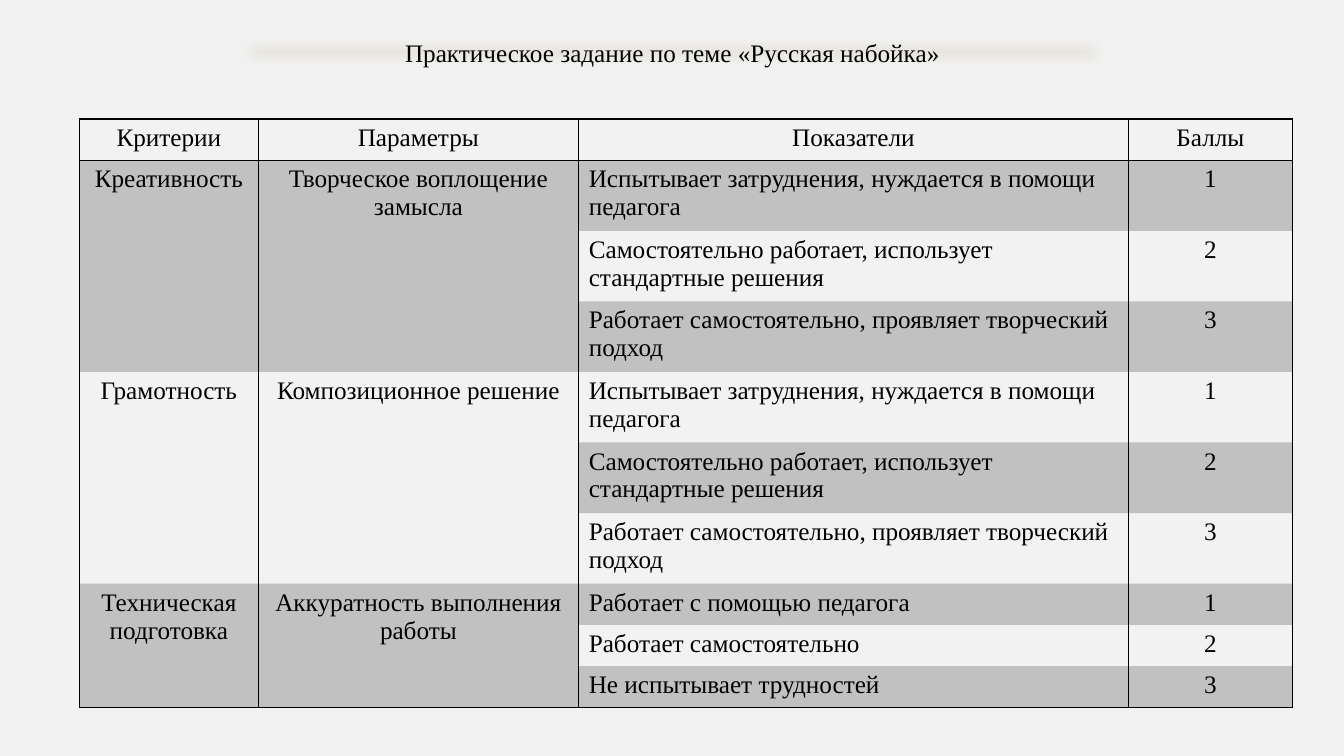
from dataclasses import dataclass

import pptx
import pptx.dml.color
import pptx.enum.shapes
import pptx.enum.text
import pptx.oxml
import pptx.oxml.ns
import pptx.util
from pptx.util import Inches


@dataclass(frozen=True)
class Theme:
    font: str = "Times New Roman"
    text_size: int = 18
    border_width: float = 1
    title_line_width: float = 0.5
    ink: str = "000000"
    background: str = "F2F2F2"
    title_fill: str = "E8E5DE"
    title_line: str = "9CA383"
    band_opacity: int = 20
    soft_edge: float = 0.12
    plain_table_style: str = "{2D5ABB26-0587-4C30-8999-92F81FD0307C}"


THEME = Theme()
ALIGN = pptx.enum.text.PP_ALIGN
TITLE = "Практическое задание по теме «Русская набойка»"
HEADERS = ["Критерии", "Параметры", "Показатели", "Баллы"]
INDEPENDENCE_LEVELS = [
    "Испытывает затруднения, нуждается в помощи педагога",
    "Самостоятельно работает, использует стандартные решения",
    "Работает самостоятельно, проявляет творческий подход",
]
ACCURACY_LEVELS = [
    "Работает с помощью педагога",
    "Работает самостоятельно",
    "Не испытывает трудностей",
]
CRITERIA = [
    ("Креативность", "Творческое воплощение замысла", INDEPENDENCE_LEVELS),
    ("Грамотность", "Композиционное решение", INDEPENDENCE_LEVELS),
    ("Техническая подготовка", "Аккуратность выполнения работы", ACCURACY_LEVELS),
]
LEVEL_COUNT = 3
COLUMN_WIDTHS = [1.77, 3.18, 5.45, 1.63]
INDICATOR_COLUMN = 2
SINGLE_ROW = 0.41
DOUBLE_ROW = 0.7


def color(value):
    return pptx.dml.color.RGBColor.from_string(value)


def write_text(text_frame, text, alignment):
    text_frame.text = text
    paragraph = text_frame.paragraphs[0]
    paragraph.alignment = alignment
    for run in paragraph.runs:
        run.font.name = THEME.font
        run.font.size = pptx.util.Pt(THEME.text_size)
        run.font.color.rgb = color(THEME.ink)


def add_title(slide):
    shape = slide.shapes.add_shape(
        pptx.enum.shapes.MSO_SHAPE.RECTANGLE,
        Inches(2.34), Inches(0.32), Inches(8.66), Inches(0.4),
    )
    shape.fill.solid()
    shape.fill.fore_color.rgb = color(THEME.title_fill)
    shape.line.color.rgb = color(THEME.title_line)
    shape.line.width = pptx.util.Pt(THEME.title_line_width)
    shape.shadow.inherit = False
    effects = shape._element.spPr.find(pptx.oxml.ns.qn("a:effectLst"))
    soft_edge = pptx.oxml.parse_xml(
        f'<a:softEdge {pptx.oxml.ns.nsdecls("a")} rad="{Inches(THEME.soft_edge)}"/>'
    )
    effects.append(soft_edge)
    shape.text_frame.word_wrap = True
    write_text(shape.text_frame, TITLE, ALIGN.CENTER)


def set_borders(cell, sides):
    properties = cell._tc.get_or_add_tcPr()
    for side in "LRTB":
        if side in sides:
            width = pptx.util.Pt(THEME.border_width)
            fill = f'<a:solidFill><a:srgbClr val="{THEME.ink}"/></a:solidFill>'
        else:
            width, fill = 0, "<a:noFill/>"
        properties.append(pptx.oxml.parse_xml(
            f'<a:ln{side} {pptx.oxml.ns.nsdecls("a")} w="{width}">{fill}</a:ln{side}>'
        ))


def set_band(cell, shaded):
    if not shaded:
        cell.fill.background()
        return
    cell.fill.solid()
    cell.fill.fore_color.rgb = color(THEME.ink)
    rgb = cell._tc.tcPr.find(".//" + pptx.oxml.ns.qn("a:solidFill") + "[last()]/" + pptx.oxml.ns.qn("a:srgbClr"))
    for rgb in cell._tc.tcPr.findall(pptx.oxml.ns.qn("a:solidFill") + "/" + pptx.oxml.ns.qn("a:srgbClr")):
        rgb.append(pptx.oxml.parse_xml(
            f'<a:alpha {pptx.oxml.ns.nsdecls("a")} val="{THEME.band_opacity * 1000}"/>'
        ))


def style_cells(table):
    last_row = len(table.rows) - 1
    for row in range(len(table.rows)):
        for column in range(len(COLUMN_WIDTHS)):
            cell = table.cell(row, column)
            merged = row > 0 and column < INDICATOR_COLUMN
            first_row = row - (row - 1) % LEVEL_COUNT if merged else row
            end_row = first_row + LEVEL_COUNT - 1 if merged else row
            sides = "LR"
            if row <= 1:
                sides += "T"
            if row == 0 or end_row == last_row:
                sides += "B"
            set_borders(cell, sides)
            set_band(cell, first_row % 2 == 1)


def fill_criterion(table, first_row, criterion, parameter, levels):
    for column, text in enumerate((criterion, parameter)):
        cell = table.cell(first_row, column)
        cell.merge(table.cell(first_row + LEVEL_COUNT - 1, column))
        write_text(cell.text_frame, text, ALIGN.CENTER)
    for score, level in enumerate(levels, 1):
        row = first_row + score - 1
        write_text(table.cell(row, INDICATOR_COLUMN).text_frame, level, ALIGN.LEFT)
        write_text(table.cell(row, INDICATOR_COLUMN + 1).text_frame, str(score), ALIGN.CENTER)
        height = DOUBLE_ROW if levels is INDEPENDENCE_LEVELS else SINGLE_ROW
        table.rows[row].height = Inches(height)


def add_criteria_table(slide):
    frame = slide.shapes.add_table(
        1 + LEVEL_COUNT * len(CRITERIA), len(HEADERS),
        Inches(0.79), Inches(1.18), Inches(12.02), Inches(5.82),
    )
    table = frame.table
    table.first_row = False
    table.horz_banding = False
    style = table._tbl.tblPr.find(pptx.oxml.ns.qn("a:tableStyleId"))
    style.text = THEME.plain_table_style
    for column, (header, width) in enumerate(zip(HEADERS, COLUMN_WIDTHS)):
        table.columns[column].width = Inches(width)
        write_text(table.cell(0, column).text_frame, header, ALIGN.CENTER)
    table.rows[0].height = Inches(SINGLE_ROW)
    for index, criterion in enumerate(CRITERIA):
        fill_criterion(table, 1 + index * LEVEL_COUNT, *criterion)
    style_cells(table)


def main():
    presentation = pptx.Presentation()
    presentation.slide_width = Inches(13.33)
    presentation.slide_height = Inches(7.5)
    slide = presentation.slides.add_slide(presentation.slide_layouts[6])
    slide.background.fill.solid()
    slide.background.fill.fore_color.rgb = color(THEME.background)
    add_title(slide)
    add_criteria_table(slide)
    presentation.save("out.pptx")


if __name__ == "__main__":
    main()
